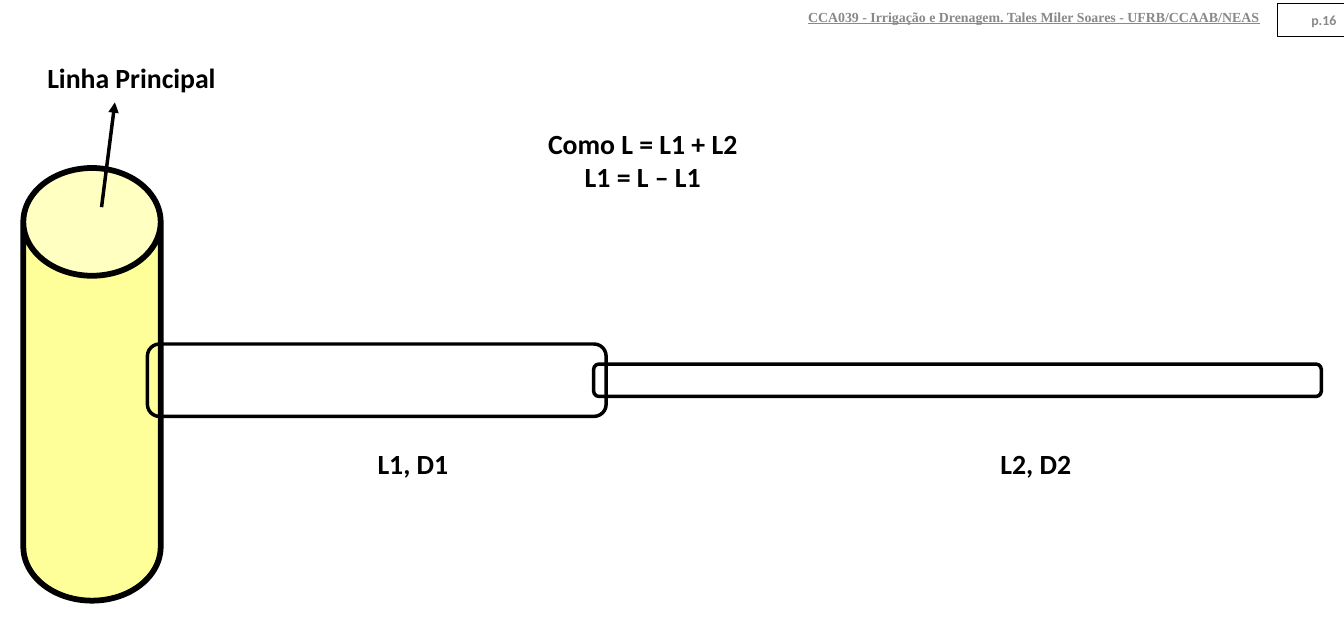
from lxml.etree import SubElement
from pptx import Presentation
from pptx.dml.color import RGBColor
from pptx.enum.shapes import MSO_CONNECTOR, MSO_SHAPE
from pptx.enum.text import MSO_ANCHOR, PP_ALIGN
from pptx.oxml.ns import qn
from pptx.util import Inches, Pt

BLACK = RGBColor(0x00, 0x00, 0x00)
WHITE = RGBColor(0xFF, 0xFF, 0xFF)
GRAY = RGBColor(0x89, 0x89, 0x89)
YELLOW = RGBColor(0xFF, 0xFF, 0x99)

LABEL_FONT = {"name": "Calibri", "size": Pt(24), "bold": True}
PAGE_FONT = {"name": "Calibri", "size": Pt(12), "bold": True}
COURSE_FONT = {"name": "Times New Roman", "size": Pt(12), "bold": True, "underline": True}


def add_outline(slide, preset, box, color, width, fill=None, rounding=None):
    shape = slide.shapes.add_shape(preset, *map(Inches, box))
    shape.shadow.inherit = False
    shape.line.color.rgb = color
    shape.line.width = Pt(width)
    if fill is None:
        shape.fill.background()
    else:
        shape.fill.solid()
        shape.fill.fore_color.rgb = fill
    if rounding is not None:
        shape.adjustments[0] = rounding
    return shape


def write(shape, lines, font, color, align, anchor):
    frame = shape.text_frame
    frame.word_wrap = True
    frame.vertical_anchor = anchor
    frame.text = "\n".join(lines)
    for paragraph in frame.paragraphs:
        paragraph.alignment = align
        for run in paragraph.runs:
            for attribute, value in font.items():
                setattr(run.font, attribute, value)
            run.font.color.rgb = color


def add_label(slide, box, *lines):
    label = add_outline(slide, MSO_SHAPE.RECTANGLE, box, WHITE, 0.75)
    write(label, lines, LABEL_FONT, BLACK, PP_ALIGN.CENTER, MSO_ANCHOR.TOP)


def add_header(slide, left, top, width):
    # Course title, then the page number at the right edge
    page_width, height = 0.81, 0.4
    course = slide.shapes.add_textbox(Inches(left), Inches(top), Inches(8.17), Inches(height))
    write(course, ["CCA039 - Irrigação e Drenagem. Tales Miler Soares - UFRB/CCAAB/NEAS"],
          COURSE_FONT, GRAY, PP_ALIGN.RIGHT, MSO_ANCHOR.MIDDLE)
    page = add_outline(slide, MSO_SHAPE.RECTANGLE,
                       (left + width - page_width, top + 0.04, page_width, height), BLACK, 0.75)
    write(page, ["p.16"], PAGE_FONT, GRAY, PP_ALIGN.RIGHT, MSO_ANCHOR.MIDDLE)


def add_main_line(slide, left, top):
    # Main pipe with its label and pointer
    add_label(slide, (left, top, 2.6, 0.51), "Linha Principal")
    add_outline(slide, MSO_SHAPE.CAN, (left, top + 1.34, 1.65, 5.2), BLACK, 5, YELLOW, 0.785)
    ends = (left + 0.94, top + 1.81, left + 1.1, top + 0.55)
    pointer = slide.shapes.add_connector(MSO_CONNECTOR.STRAIGHT, *map(Inches, ends))
    pointer.line.color.rgb = BLACK
    pointer.line.width = Pt(3)
    SubElement(pointer.line._get_or_add_ln(), qn("a:tailEnd"), type="triangle")
    SubElement(pointer._element.spPr, qn("a:effectLst"))


def add_lateral(slide, left, middle):
    # Two pipe sections around one axis: offset, length, diameter, label offset
    sections = {
        "L1, D1": (0, 5.51, 0.87, 0.79),
        "L2, D2": (5.36, 8.74, 0.39, 8.27),
    }
    for name, (offset, length, diameter, label_offset) in sections.items():
        add_outline(slide, MSO_SHAPE.ROUNDED_RECTANGLE,
                    (left + offset, middle - diameter / 2, length, diameter),
                    BLACK, 3, rounding=0.167)
        add_label(slide, (left + label_offset, middle + 0.75, 4.8, 0.51), name)


def main():
    presentation = Presentation()
    # 41 cm wide
    presentation.slide_width = Inches(41 / 2.54)
    presentation.slide_height = Inches(7.5)
    slide = presentation.slides.add_slide(presentation.slide_layouts[6])

    add_header(slide, 7.06, 0, 9.09)
    add_main_line(slide, 0.28, 0.68)
    add_lateral(slide, 1.77, 4.57)
    # Relation between the section lengths
    add_label(slide, (5.32, 1.47, 4.8, 0.91), "Como L = L1 + L2", "L1 = L – L1")

    presentation.save("out.pptx")


if __name__ == "__main__":
    main()
